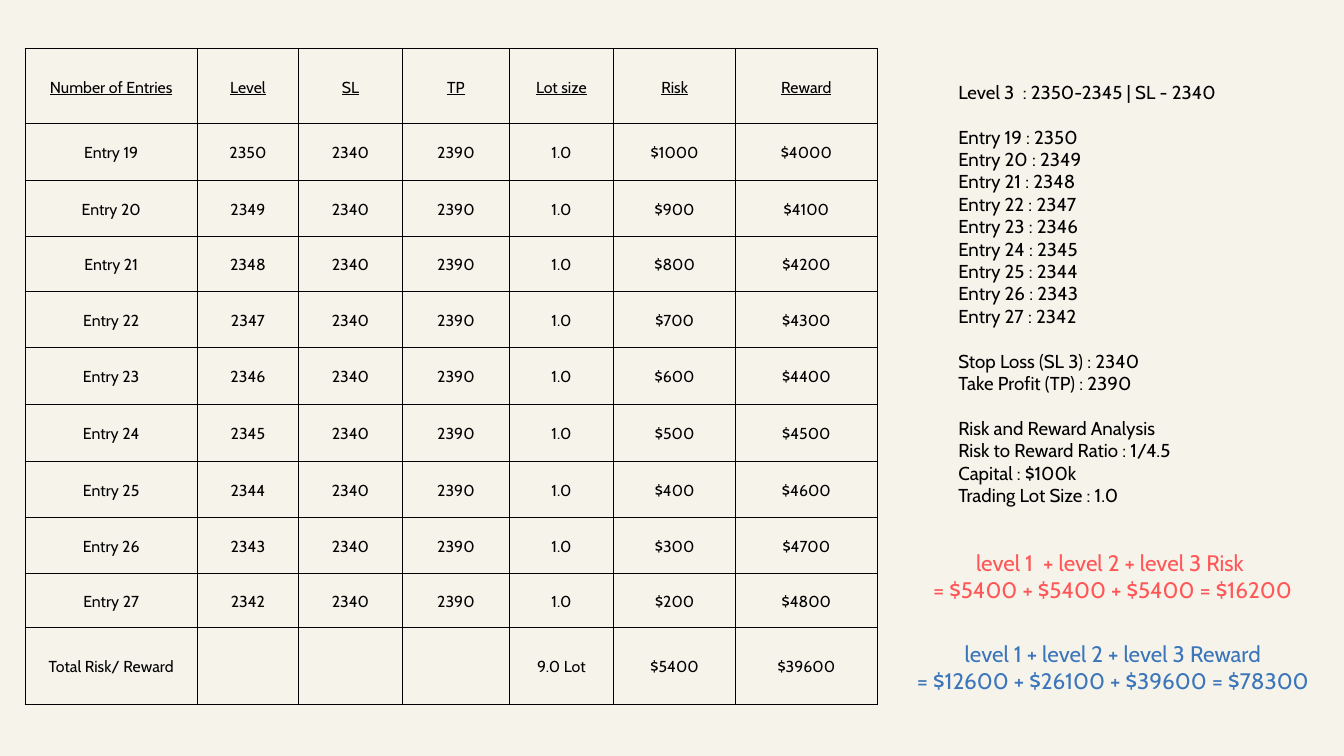
"""Build the level 3 trade plan slide: entry table, notes and totals."""
import lxml.etree
import pptx
import pptx.dml.color
import pptx.enum.text
import pptx.oxml.ns
import pptx.util
from dataclasses import dataclass

Inches = pptx.util.Inches
Pt = pptx.util.Pt
CENTER = pptx.enum.text.PP_ALIGN.CENTER
LEFT = pptx.enum.text.PP_ALIGN.LEFT


@dataclass(frozen=True)
class Theme:
    font: str = "Cabin"
    paper: str = "F6F3EB"
    ink: str = "000000"
    red: str = "FF5757"
    blue: str = "3B75BA"
    cell: float = 17
    note: float = 20
    total: float = 24
    border: float = 0.75


THEME = Theme()

HEADS = ["Number of Entries", "Level", "SL", "TP", "Lot size", "Risk", "Reward"]
TRADES = [
    ("Entry 19", 2350, 1000, 4000),
    ("Entry 20", 2349, 900, 4100),
    ("Entry 21", 2348, 800, 4200),
    ("Entry 22", 2347, 700, 4300),
    ("Entry 23", 2346, 600, 4400),
    ("Entry 24", 2345, 500, 4500),
    ("Entry 25", 2344, 400, 4600),
    ("Entry 26", 2343, 300, 4700),
    ("Entry 27", 2342, 200, 4800),
]
STOP, TARGET, LOT = "2340", "2390", "1.0"
SUMS = ["Total Risk/ Reward", "", "", "", "9.0 Lot", "$5400", "$39600"]
WIDTHS = [2.57, 1.5, 1.55, 1.59, 1.55, 1.82, 2.1]
HEIGHTS = [1.12, 0.84, 0.84, 0.81, 0.84, 0.85, 0.84, 0.84, 0.84, 0.79, 1.16]

NOTES = [
    ["Level 3  : 2350-2345 | SL - 2340"],
    [f"{name} : {level}" for name, level, risk, gain in TRADES],
    [f"Stop Loss (SL 3) : {STOP}", f"Take Profit (TP) : {TARGET}"],
    ["Risk and Reward Analysis", "Risk to Reward Ratio : 1/4.5",
     "Capital : $100k", f"Trading Lot Size : {LOT}"],
]
TOTALS = [
    ((13.65, 8.17, 5.81, 0.78), THEME.red,
     ["level 1  + level 2 + level 3 Risk ", "= $5400 + $5400 + $5400 = $16200"]),
    ((13.23, 9.52, 6.66, 0.78), THEME.blue,
     ["level 1 + level 2 + level 3 Reward", "= $12600 + $26100 + $39600 = $78300"]),
]


def style(para, text, size, color, lead, align):
    para.text = text
    para.alignment = align
    para.line_spacing = Pt(lead)
    para.font.name = THEME.font
    para.font.size = Pt(size)
    para.font.color.rgb = pptx.dml.color.RGBColor.from_string(color)


def add_text(slide, place, groups, size, color, align):
    frame = slide.shapes.add_textbox(*map(Inches, place)).text_frame
    frame.word_wrap = True
    frame.margin_left = frame.margin_right = 0
    frame.margin_top = frame.margin_bottom = 0
    lead = size * 1.2
    para = None
    for group in groups:
        for index, line in enumerate(group):
            gap = para is not None and index == 0
            para = frame.add_paragraph() if para is not None else frame.paragraphs[0]
            style(para, line, size, color, lead, align)
            if gap:
                para.space_before = Pt(lead)


def add_border(cell):
    props = cell._tc.get_or_add_tcPr()
    tag = pptx.oxml.ns.qn
    for index, side in enumerate(("a:lnL", "a:lnR", "a:lnT", "a:lnB")):
        line = lxml.etree.Element(tag(side), w=str(Pt(THEME.border)))
        fill = lxml.etree.SubElement(line, tag("a:solidFill"))
        lxml.etree.SubElement(fill, tag("a:srgbClr"), val=THEME.ink)
        props.insert(index, line)


def add_grid(slide, rows):
    place = (0.37, 0.72, sum(WIDTHS), sum(HEIGHTS))
    table = slide.shapes.add_table(len(rows), len(HEADS), *map(Inches, place)).table
    table.first_row = table.horz_banding = False
    for column, width in zip(table.columns, WIDTHS):
        column.width = Inches(width)
    for index, (row, height, texts) in enumerate(zip(table.rows, HEIGHTS, rows)):
        row.height = Inches(height)
        for cell, text in zip(row.cells, texts):
            cell.fill.background()
            add_border(cell)
            cell.vertical_anchor = pptx.enum.text.MSO_ANCHOR.MIDDLE
            cell.margin_left = cell.margin_right = Inches(0.21)
            cell.margin_top = cell.margin_bottom = Inches(0.21)
            para = cell.text_frame.paragraphs[0]
            style(para, text, THEME.cell, THEME.ink, THEME.cell * 1.4, CENTER)
            if index == 0:
                para.font.underline = True


def main():
    deck = pptx.Presentation()
    deck.slide_width, deck.slide_height = Inches(20), Inches(11.25)
    slide = deck.slides.add_slide(deck.slide_layouts[6])
    back = slide.background.fill
    back.solid()
    back.fore_color.rgb = pptx.dml.color.RGBColor.from_string(THEME.paper)

    body = [[name, str(level), STOP, TARGET, LOT, f"${risk}", f"${gain}"]
            for name, level, risk, gain in TRADES]
    add_text(slide, (14.26, 1.2, 4.89, 6.34), NOTES, THEME.note, THEME.ink, LEFT)
    add_grid(slide, [HEADS, *body, SUMS])
    for place, color, lines in TOTALS:
        add_text(slide, place, [lines], THEME.total, color, CENTER)
    deck.save("out.pptx")


if __name__ == "__main__":
    main()
